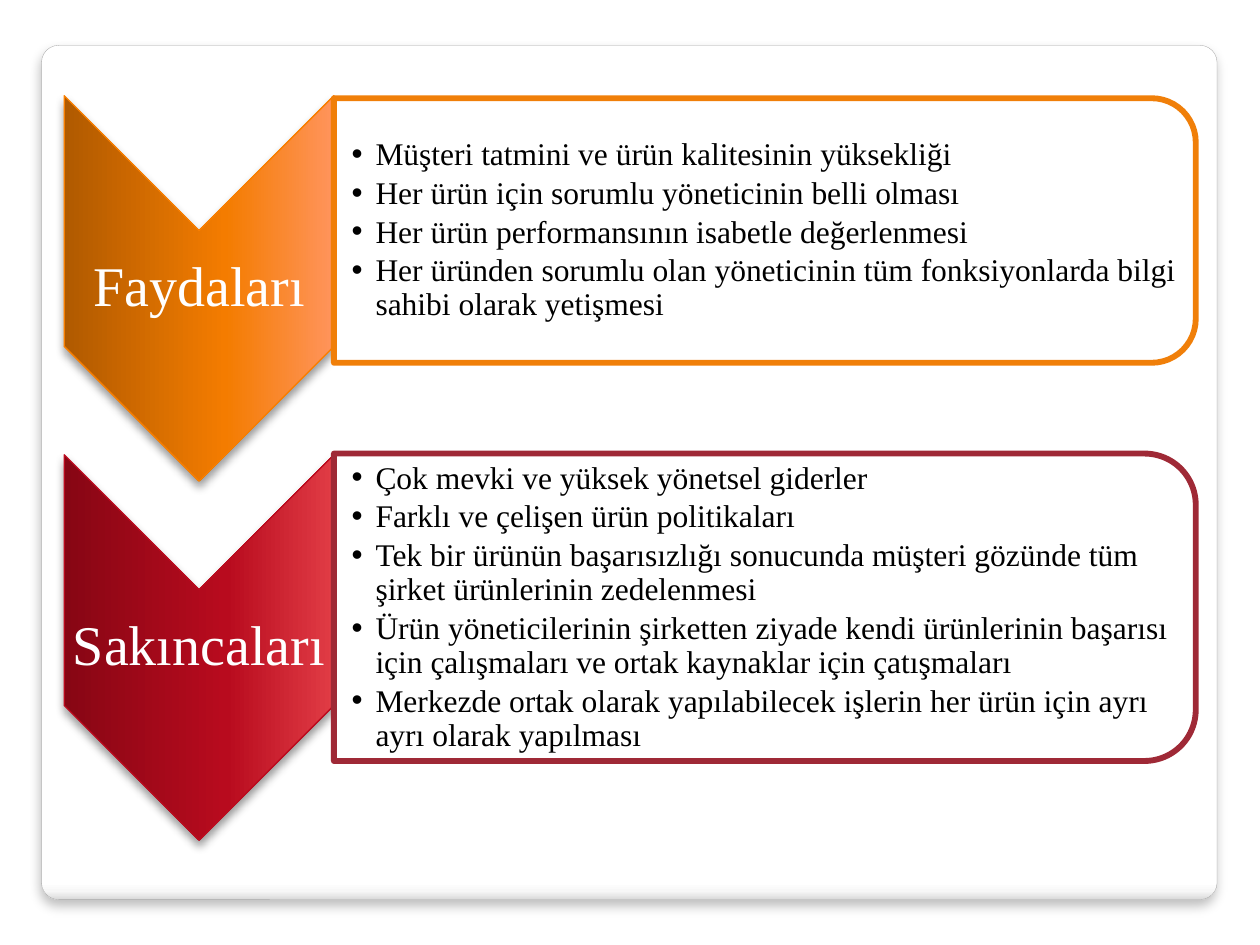
from lxml import etree
from pptx import Presentation
from pptx.dml.color import RGBColor
from pptx.enum.shapes import MSO_SHAPE as SHAPE
from pptx.enum.text import MSO_ANCHOR, MSO_AUTO_SIZE, PP_ALIGN
from pptx.oxml.ns import qn
from pptx.util import Inches, Pt

FONT = "Times New Roman"
COLORS = {"white": "FFFFFF", "black": "000000", "panel_line": "A4A4A4"}
PANEL_STOPS = [(0, "FFFFFF"), (98, "FFFFFF"), (99, "F7F7F7"), (100, "DADADA")]

SECTIONS = [
    {
        "label": "Faydaları",
        "items": [
            "Müşteri tatmini ve ürün kalitesinin yüksekliği",
            "Her ürün için sorumlu yöneticinin belli olması",
            "Her ürün performansının isabetle değerlenmesi",
            "Her üründen sorumlu olan yöneticinin tüm fonksiyonlarda bilgi "
            "sahibi olarak yetişmesi",
        ],
        "stops": [(0, "B05A00"), (60, "F47C00"), (100, "FF945C")],
        "chevron_line": "F97F00", "box_line": "F07F09",
        "chevron_top": 0.76, "box_top": 0.78, "box_height": 2.1,
    },
    {
        "label": "Sakıncaları",
        "items": [
            "Çok mevki ve yüksek yönetsel giderler",
            "Farklı ve çelişen ürün politikaları",
            "Tek bir ürünün başarısızlığı sonucunda müşteri gözünde tüm "
            "şirket ürünlerinin zedelenmesi",
            "Ürün yöneticilerinin şirketten ziyade kendi ürünlerinin başarısı "
            "için çalışmaları ve ortak kaynaklar için çatışmaları",
            "Merkezde ortak olarak yapılabilecek işlerin her ürün için ayrı "
            "ayrı olarak yapılması",
        ],
        "stops": [(0, "870614"), (60, "B80B1E"), (100, "E13C45")],
        "chevron_line": "BC0B1F", "box_line": "9F2936",
        "chevron_top": 3.61, "box_top": 3.6, "box_height": 2.44,
    },
]
CHEVRON_LEFT, CHEVRON_W, CHEVRON_H = 0.51, 2.14, 3.06
BOX_LEFT, BOX_W = CHEVRON_LEFT + CHEVRON_W, 6.84
LABEL_H = 0.92


def rgb(value):
    return RGBColor.from_string(value)


def add_shape(s, kind, x, y, w, h, line, line_width):
    sp = s.shapes.add_shape(kind, Inches(x), Inches(y), Inches(w), Inches(h))
    sp.line.color.rgb = rgb(line)
    sp.line.width = Pt(line_width)
    sp.shadow.inherit = False
    return sp


def add_turned(s, kind, x, y, w, h, line, line_width):
    """Add a shape turned by 90 degrees that covers the given box as seen."""
    sp = add_shape(s, kind, x + (w - h) / 2, y + (h - w) / 2, h, w,
                   line, line_width)
    sp.rotation = 90
    return sp


def add_color(parent, value, alpha=None):
    clr = etree.SubElement(parent, qn("a:srgbClr"), val=value)
    if alpha is not None:
        etree.SubElement(clr, qn("a:alpha"), val=str(alpha * 1000))


def set_gradient(sp, stops, angle):
    sp.fill.background()
    spPr = sp._element.spPr
    grad = etree.Element(qn("a:gradFill"), rotWithShape="1")
    gs_list = etree.SubElement(grad, qn("a:gsLst"))
    for pos, value in stops:
        add_color(etree.SubElement(gs_list, qn("a:gs"), pos=str(pos * 1000)), value)
    etree.SubElement(grad, qn("a:lin"), ang=str(angle * 60000), scaled="0")
    spPr.replace(spPr.find(qn("a:noFill")), grad)


def set_shadow(sp, alpha, blur, dist):
    effects = sp._element.spPr.find(qn("a:effectLst"))
    shadow = etree.SubElement(
        effects, qn("a:outerShdw"), blurRad=str(Pt(blur)), dist=str(Pt(dist)),
        dir="5400000", algn="t", rotWithShape="0")
    add_color(shadow, COLORS["black"], alpha)


def set_bullet(p):
    pPr = p._p.get_or_add_pPr()
    pPr.set("marL", str(Inches(0.19)))
    pPr.set("indent", str(-Inches(0.19)))
    etree.SubElement(pPr, qn("a:buFont"), typeface="Arial")
    etree.SubElement(pPr, qn("a:buChar"), char="•")


def place_text(s, ph, lines, box, insets, size, color, after=0, bullets=False):
    """Move a placeholder in front of the shapes and fill it with lines."""
    s.shapes._spTree.append(ph._element)
    ph.left, ph.top, ph.width, ph.height = map(Inches, box)
    tf = ph.text_frame
    tf.text = "\n".join(lines)
    tf.word_wrap = True
    tf.auto_size = MSO_AUTO_SIZE.NONE
    tf.vertical_anchor = MSO_ANCHOR.MIDDLE
    tf.margin_left, tf.margin_top, tf.margin_right, tf.margin_bottom = map(
        Inches, insets)
    for p in tf.paragraphs:
        p.alignment = PP_ALIGN.LEFT if bullets else PP_ALIGN.CENTER
        p.line_spacing = 0.9
        p.space_before = Pt(0)
        p.space_after = Pt(after)
        if bullets:
            set_bullet(p)
        for r in p.runs:
            r.font.name, r.font.size, r.font.bold = FONT, Pt(size), False
            r.font.color.rgb = rgb(color)


def add_section(s, section, label, body):
    top, h = section["box_top"], section["box_height"]
    chevron = add_turned(s, SHAPE.CHEVRON, CHEVRON_LEFT, section["chevron_top"],
                         CHEVRON_W, CHEVRON_H, section["chevron_line"], 0.75)
    set_gradient(chevron, section["stops"], 270)
    set_shadow(chevron, 40, 5.2, 3)
    place_text(s, label, [section["label"]],
               (CHEVRON_LEFT, section["chevron_top"] + CHEVRON_W / 2,
                CHEVRON_W, LABEL_H),
               [0.02] * 4, 32, COLORS["white"])

    box = add_turned(s, SHAPE.ROUND_2_SAME_RECTANGLE, BOX_LEFT, top, BOX_W, h,
                     section["box_line"], 3.35)
    box.fill.solid()
    box.fill.fore_color.rgb = rgb(COLORS["white"])
    corner = 0.05 * h  # room the rounded corners take from the text
    place_text(s, body, section["items"],
               (BOX_LEFT, top + corner, BOX_W - corner, h - 2 * corner),
               (0.14, 0.01, 0.01, 0.01), 18, COLORS["black"],
               after=2.7, bullets=True)


def main():
    prs = Presentation()
    prs.slide_width, prs.slide_height = Inches(10), Inches(7.5)
    s = prs.slides.add_slide(prs.slide_layouts.get_by_name("Comparison"))
    title, *holders = s.placeholders
    s.shapes._spTree.remove(title._element)

    panel = add_shape(s, SHAPE.ROUNDED_RECTANGLE, 0.33, 0.36, 9.33, 6.78,
                      COLORS["panel_line"], 0.16)
    panel.adjustments[0] = 0.02
    set_gradient(panel, PANEL_STOPS, 90)
    set_shadow(panel, 25, 6, 4)

    for section, label, body in zip(SECTIONS, holders[::2], holders[1::2]):
        add_section(s, section, label, body)
    prs.save("out.pptx")


if __name__ == "__main__":
    main()
